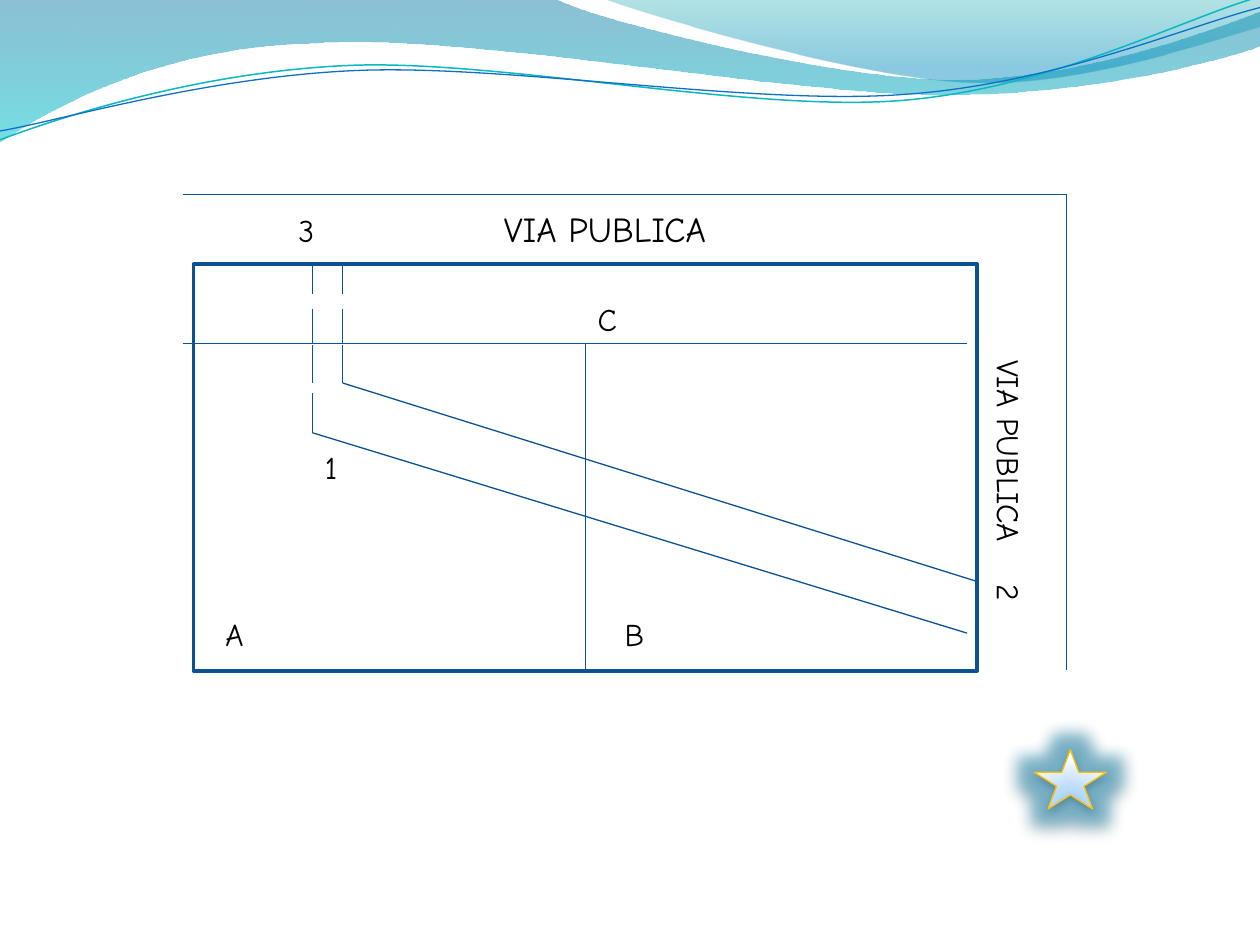
from dataclasses import dataclass

from lxml.etree import SubElement
from pptx import Presentation
from pptx.dml.color import RGBColor
from pptx.enum.shapes import MSO_CONNECTOR as Link, MSO_SHAPE as Preset
from pptx.oxml import parse_xml
from pptx.oxml.ns import nsdecls, qn
from pptx.util import Inches, Pt

CELL = 0.1  # inches; the slide is a grid of 100 columns by 75 rows


@dataclass(frozen=True)
class Theme:
    font: str = "Comic Neue"
    ink: str = "000000"
    paper: str = "FFFFFF"
    street: str = "095295"
    plot_edge: str = "0B5292"
    teal_curve: str = "0AB8BF"
    blue_curve: str = "0F6FC6"
    star_edge: str = "FFC000"
    glow: str = "1089B8"
    label: int = 18
    title: int = 20
    thin: float = 0.75
    thick: float = 2


@dataclass(frozen=True)
class Box:
    left: float
    top: float
    width: float
    height: float

    def at(self, col, row):
        return cells(self.left + col), cells(self.top + row)


THEME = Theme()
LINEAR = '<a:lin ang="5400000" scaled="0"/>'
RADIAL = ('<a:path path="circle"><a:fillToRect l="50000" t="130000" '
          'r="50000" b="-30000"/></a:path>')


def cells(count):
    return Inches(count * CELL)


def set_line(part, color, width):
    part.line.color.rgb = RGBColor.from_string(color)
    part.line.width = Pt(width)


def set_gradient(shape, stops, direction):
    """Each stop is (position %, colour, opacity %)."""
    marks = "".join(
        f'<a:gs pos="{pos * 1000}"><a:srgbClr val="{color}">'
        f'<a:alpha val="{alpha * 1000}"/></a:srgbClr></a:gs>'
        for pos, color, alpha in stops)
    shape.fill.background()
    props = shape._element.spPr
    props.replace(props.find(qn("a:noFill")), parse_xml(
        f'<a:gradFill {nsdecls("a")} rotWithShape="1"><a:gsLst>{marks}</a:gsLst>'
        f'{direction}</a:gradFill>'))


def add_text(slide, box, col, row, width, text, *, height=4, size=THEME.label,
             tab=None, tail_size=None, rotation=0):
    """Place text; a tab (in columns) sets where the part after "\\t" starts."""
    label = slide.shapes.add_textbox(*box.at(col, row), cells(width), cells(height))
    label.rotation = rotation
    label.text_frame.word_wrap = tab is not None
    paragraph = label.text_frame.paragraphs[0]
    head, mark, tail = text.partition("\t")
    for words, points in ((head + mark, size), (tail, tail_size or size)):
        if words:
            run = paragraph.add_run()
            run.text = words
            run.font.name = THEME.font
            run.font.size = Pt(points)
            run.font.color.rgb = RGBColor.from_string(THEME.ink)
    if tab is not None:
        tabs = SubElement(paragraph._p.get_or_add_pPr(), qn("a:tabLst"))
        SubElement(tabs, qn("a:tab"), pos=str(cells(tab)), algn="l")


def add_line(slide, box, start, end):
    line = slide.shapes.add_connector(Link.STRAIGHT, *box.at(*start), *box.at(*end))
    set_line(line, THEME.street, THEME.thin)
    SubElement(line._element.spPr, qn("a:effectLst"))
    return line


def add_curve(slide, box, start, segments, closed):
    """A segment is one point (straight) or three points (Bezier)."""
    builder = slide.shapes.build_freeform(*box.at(*start))
    builder.add_line_segments([box.at(*segment[-1]) for segment in segments],
                              close=closed)
    curve = builder.convert_to_shape()
    curve.shadow.inherit = False
    # Bend the straight segments that have control points
    for step, segment in zip(list(curve._element.iter(qn("a:lnTo"))), segments):
        if len(segment) == 3:
            step.tag = qn("a:cubicBezTo")
            step.remove(step[0])
            for point in segment:
                x, y = box.at(*point)
                SubElement(step, qn("a:pt"), x=str(x - curve.left), y=str(y - curve.top))
    return curve


def draw_waves(slide, box):
    # Filled waves
    left_wave = [[(44, -0.1)], [(47.6, 1.7), (66.4, 6.3), (75.8, 6.3)],
                 [(85.3, 6.3), (95.8, 2.6), (100, 0.9)], [(100.1, 3.6)],
                 [(98.3, 4.4), (87, 7.6), (74.6, 7.5)],
                 [(62.2, 7.5), (38.2, 2.8), (25.7, 3.4)],
                 [(12.9, 3.6), (4.6, 8.3), (-0.1, 11.3)]]
    right_wave = [[(50.9, 1.1), (68.2, 6.2), (76.9, 6.5)],
                  [(85.6, 6.9), (96.1, 3.2), (100, 2.1)], [(100, 0)]]
    for start, segments, stops in (
            ((0, 0), left_wave, [(0, "0074A1", 45), (100, "00C6CF", 55)]),
            ((47.9, -0.1), right_wave, [(0, "00A1A9", 30), (80, "008BBF", 45)])):
        wave = add_curve(slide, box, start, segments, True)
        set_gradient(wave, stops, LINEAR)
        wave.line.fill.background()

    # Thin curves
    teal = [[(4.8, 9.3), (15.8, 5.7), (27.7, 5.2)], [(39.5, 4.7), (59.3, 8.9), (71.3, 8)],
            [(83.3, 7.1), (93.8, 1.5), (99.8, -0.2)]]
    blue = [[(4.7, 9.6), (16.4, 6.1), (28.3, 5.6)], [(40.3, 5.1), (59.7, 8.4), (71.7, 7.5)],
            [(83.6, 6.7), (94.1, 2.1), (100, 0.6)]]
    for start, segments, color, width in (((0, 11.1), teal, THEME.teal_curve, 0.85),
                                          ((0, 10.4), blue, THEME.blue_curve, THEME.thin)):
        curve = add_curve(slide, box, start, segments, False)
        curve.fill.background()
        set_line(curve, color, width)


def draw_site_plan(slide, box):
    # Plot and its three lots
    plot = slide.shapes.add_shape(Preset.RECTANGLE, *box.at(0.8, 5.5),
                                  cells(62.2), cells(32.3))
    plot.shadow.inherit = False
    plot.fill.solid()
    plot.fill.fore_color.rgb = RGBColor.from_string(THEME.paper)
    set_line(plot, THEME.plot_edge, THEME.thick)
    add_line(slide, box, (0, 11.8), (62.2, 11.8))
    divider = add_line(slide, box, (31.9, 37.8), (31.9, 11.8))
    divider.begin_connect(plot, 2)

    # Public road
    corner = (box.width, 0)
    add_line(slide, box, (0, 0), corner)
    add_line(slide, box, corner, (box.width, box.height))
    add_text(slide, box, 8.15, 0.5, 35, "3\tVIA PUBLICA", height=4.4,
             tab=16.3, tail_size=THEME.title)
    add_text(slide, box, 52.75, 22.95, 25.6, "VIA PUBLICA\t2", tab=17.8, rotation=90)

    # Lot letters and the bend of the passage
    for name, col, row in (("B", 34.05, 32.85), ("A", 2.35, 32.85), ("C", 31.9, 7.85),
                           ("1", 10.25, 19.65)):
        add_text(slide, box, col, row, 3.6, name)

    # Passage: dashed walls, then two slanted ones
    near, far = 10.25, 12.65
    for col in (near, far):
        for top, bottom in ((5.5, 7.85), (9.05, 11.8), (11.95, 14.95)):
            add_line(slide, box, (col, top), (col, bottom))
    add_line(slide, box, (near, 15.75), (near, 18.9))
    add_line(slide, box, (far, 14.95), (63, 30.7))
    add_line(slide, box, (near, 18.9), (62.2, 34.8))


def draw_star(slide, box):
    star = slide.shapes.add_shape(Preset.STAR_5_POINT, *box.at(0, 0),
                                  cells(box.width), cells(box.height))
    set_gradient(star, [(0, "8BC2F1", 100), (43, "B9DBFD", 100),
                        (93, "EAF3FE", 100), (100, "F8FBFF", 100)], RADIAL)
    set_line(star, THEME.star_edge, THEME.thin)
    star.shadow.inherit = False
    effects = star._element.spPr.find(qn("a:effectLst"))
    glow = SubElement(effects, qn("a:glow"), rad=str(Pt(18)))
    shadow = SubElement(effects, qn("a:outerShdw"), blurRad=str(Pt(5)),
                        dist=str(Pt(2)), dir="5400000", rotWithShape="0")
    for effect, color, alpha in ((glow, THEME.glow, 45), (shadow, THEME.ink, 43)):
        tint = SubElement(effect, qn("a:srgbClr"), val=color)
        SubElement(tint, qn("a:alpha"), val=str(alpha * 1000))


def main():
    deck = Presentation()
    deck.slide_width, deck.slide_height = cells(100), cells(75)
    slide = deck.slides.add_slide(deck.slide_layouts[6])
    draw_waves(slide, Box(0, 0, 100, 11.4))
    draw_site_plan(slide, Box(14.55, 15.45, 70.1, 37.75))
    draw_star(slide, Box(82.1, 59.5, 5.7, 4.7))
    deck.save("out.pptx")


if __name__ == "__main__":
    main()
